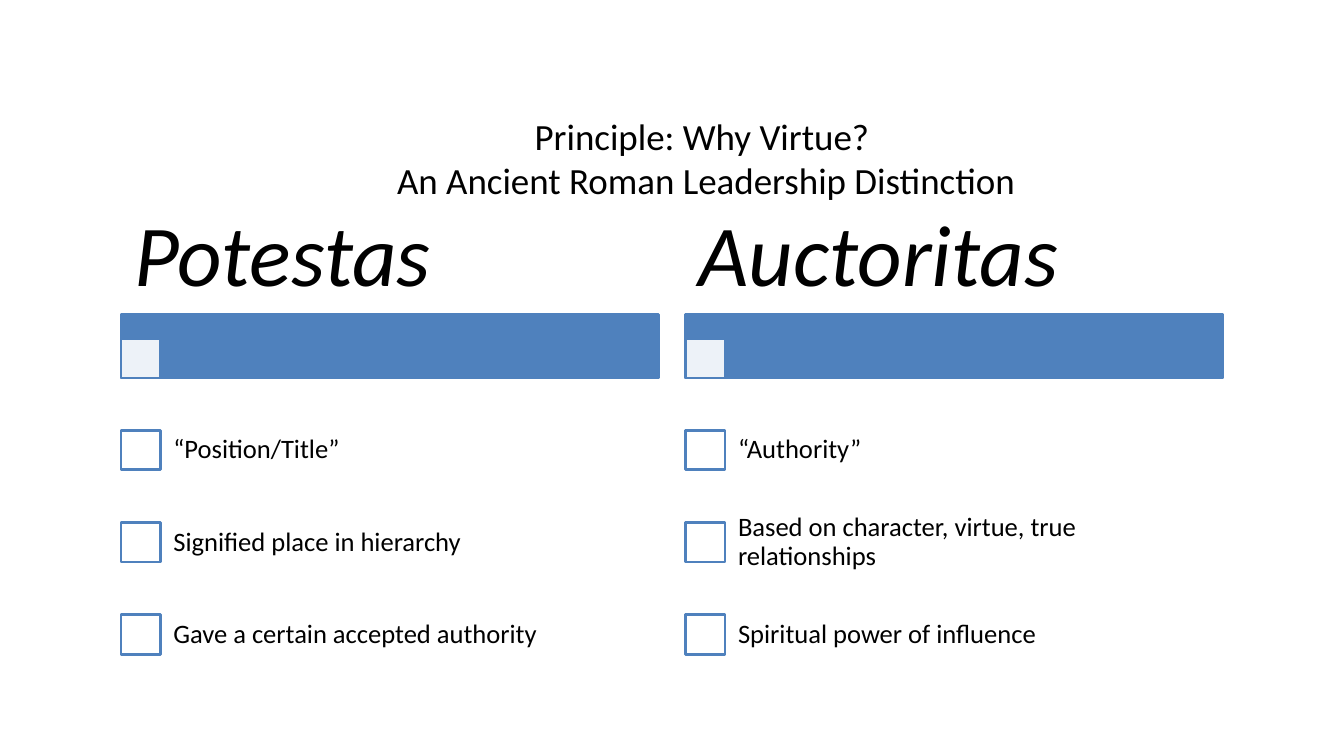
from dataclasses import dataclass

from lxml import etree
from pptx import Presentation
from pptx.dml.color import RGBColor
from pptx.enum.shapes import MSO_SHAPE
from pptx.enum.text import MSO_ANCHOR, MSO_AUTO_SIZE, PP_ALIGN
from pptx.oxml.ns import qn
from pptx.shapes.autoshape import Shape
from pptx.shapes.shapetree import GroupShapes
from pptx.text.text import TextFrame
from pptx.util import Inches, Pt

BLUE = RGBColor(0x4F, 0x81, 0xBD)
WHITE = RGBColor(0xFF, 0xFF, 0xFF)
BLACK = RGBColor(0x00, 0x00, 0x00)
FONT = "Calibri"

# Grid, in inches
LEFT, COL_W, COL_STEP = 1.2, 5.33, 5.6
HEAD_TOP, HEAD_H = 2.0, 1.13
BAR_TOP, BAR_H = 3.12, 0.63
ROW_TOP, ROW_STEP = 4.01, 0.915
BOX, BOX_DROP, TEXT_INDENT = 0.39, 0.26, 0.37


@dataclass
class Column:
    heading: str
    points: list[str]


COLUMNS = [
    Column("Potestas", ["“Position/Title”", "Signified place in hierarchy",
                        "Gave a certain accepted authority"]),
    Column("Auctoritas", ["“Authority”",
                          "Based on character, virtue, true relationships",
                          "Spiritual power of influence"]),
]


def style_text(tf: TextFrame, size: float, italic: bool = False) -> None:
    tf.word_wrap = True
    tf.auto_size = MSO_AUTO_SIZE.NONE
    tf.vertical_anchor = MSO_ANCHOR.MIDDLE
    for p in tf.paragraphs:
        for r in p.runs:
            r.font.name = FONT
            r.font.size = Pt(size)
            r.font.italic = italic
            r.font.color.rgb = BLACK


def add_rect(shapes: GroupShapes, x: float, y: float, w: float, h: float,
             fill: RGBColor) -> Shape:
    sp = shapes.add_shape(MSO_SHAPE.RECTANGLE, Inches(x), Inches(y),
                          Inches(w), Inches(h))
    sp.shadow.inherit = False
    sp.fill.solid()
    sp.fill.fore_color.rgb = fill
    sp.line.color.rgb = BLUE
    sp.line.width = Pt(2)
    return sp


def add_label(shapes: GroupShapes, x: float, y: float, w: float, h: float,
              text: str, size: float, inset: tuple[float, float],
              italic: bool = False) -> None:
    tf = shapes.add_textbox(Inches(x), Inches(y), Inches(w), Inches(h)).text_frame
    tf.text = text
    tf.margin_left = tf.margin_right = Inches(inset[0])
    tf.margin_top = tf.margin_bottom = Inches(inset[1])
    tf.paragraphs[0].line_spacing = 0.9
    style_text(tf, size, italic)


def set_opacity(sp: Shape, percent: int) -> None:
    color = sp.fill._xPr.find(qn("a:solidFill"))[0]
    etree.SubElement(color, qn("a:alpha")).set("val", str(percent * 1000))


def add_column(shapes: GroupShapes, x: float, column: Column) -> None:
    # Heading bar with its translucent square
    add_rect(shapes, x, BAR_TOP, COL_W, BAR_H, BLUE)
    square = add_rect(shapes, x, BAR_TOP + BAR_H - BOX, BOX, BOX, WHITE)
    set_opacity(square, 90)
    add_label(shapes, x, HEAD_TOP, COL_W, HEAD_H, column.heading, 62,
              (0.13, 0.09), italic=True)

    # Checkbox rows
    for i, point in enumerate(column.points):
        y = ROW_TOP + i * ROW_STEP
        add_rect(shapes, x, y + BOX_DROP, BOX, BOX, WHITE)
        add_label(shapes, x + TEXT_INDENT, y, COL_W - TEXT_INDENT, ROW_STEP,
                  point, 19, (0.15, 0.15))


def main() -> None:
    prs = Presentation()
    prs.slide_width, prs.slide_height = Inches(13.33), Inches(7.5)
    slide = prs.slides.add_slide(prs.slide_layouts[5])

    # Title
    title = slide.shapes.title
    title.left, title.top = Inches(3.67), Inches(1.15)
    title.width, title.height = Inches(6.67), Inches(0.83)
    title.text_frame.text = ("Principle: Why Virtue? \v"
                             "An Ancient Roman Leadership Distinction")
    title.text_frame.paragraphs[0].alignment = PP_ALIGN.CENTER
    style_text(title.text_frame, 26.4)

    # Two compared columns
    group = slide.shapes.add_group_shape()
    for i, column in enumerate(COLUMNS):
        add_column(group.shapes, LEFT + i * COL_STEP, column)

    prs.save("out.pptx")


if __name__ == "__main__":
    main()
